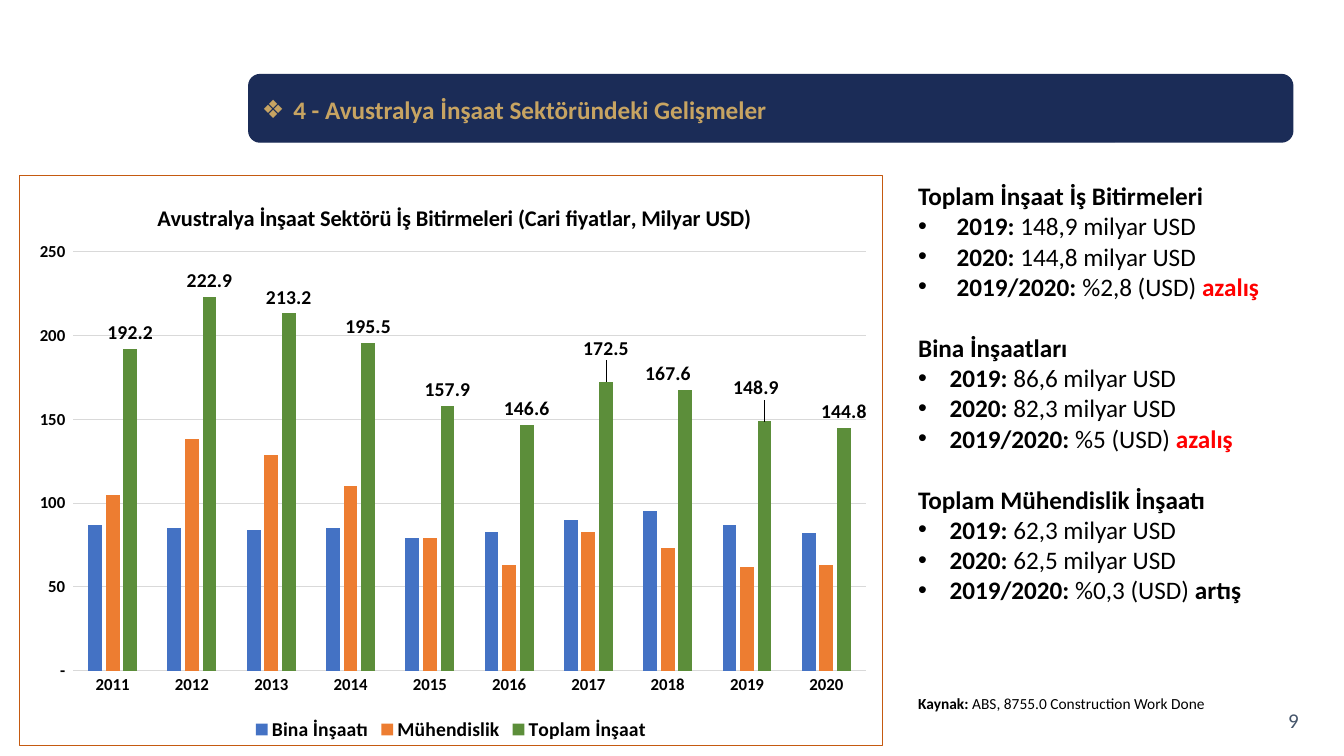
"""Builds a slide on Australian construction work with a column chart and key figures."""
from lxml import etree
from pptx import Presentation
from pptx import util as u
from pptx.chart.data import CategoryChartData
from pptx.dml.color import RGBColor
from pptx.enum import chart as ch, shapes, text
from pptx.oxml import parse_xml
from pptx.oxml.ns import nsdecls, qn

NAVY = RGBColor(0x1B, 0x2C, 0x57)
GOLD = RGBColor(0xC7, 0xA4, 0x62)
SLATE = RGBColor(0x44, 0x54, 0x6A)
BLACK = RGBColor(0, 0, 0)
RED = RGBColor(0xFF, 0, 0)
GREY = RGBColor(0xD9, 0xD9, 0xD9)
WHITE = RGBColor(0xFF, 0xFF, 0xFF)
RUST = RGBColor(0xC5, 0x5A, 0x11)
BLUE = RGBColor(0x44, 0x72, 0xC4)
ORANGE = RGBColor(0xED, 0x7D, 0x31)
GREEN = RGBColor(0x5C, 0x8E, 0x3A)

SERIES = [
    ("Bina İnşaatı", BLUE, [87, 85, 84, 85, 79, 83, 90, 95, 87, 82]),
    ("Mühendislik", ORANGE, [105, 138, 129, 110, 79, 63, 83, 73, 62, 63]),
    ("Toplam İnşaat", GREEN,
     [192.2, 222.9, 213.2, 195.5, 157.9, 146.6, 172.5, 167.6, 148.9, 144.8]),
]
MOVED_LABELS = {6: (0, -0.03), 7: (-0.02, 0), 8: (-0.01, -0.03)}
FIGURES = [
    ("Toplam İnşaat İş Bitirmeleri", 0.97, "148,9", "144,8", "%2,8", "azalış", RED),
    ("Bina İnşaatları", 0.79, "86,6", "82,3", "%5", "azalış", RED),
    ("Toplam Mühendislik İnşaatı", 0.79, "62,3", "62,5", "%0,3", "artış", BLACK),
]


def style(font, size, color=BLACK, bold=False):
    """Set the font of a run or chart part."""
    font.name, font.size, font.bold = "Calibri", u.Pt(size), bold
    font.color.rgb = color


def write(p, content, size=18, color=BLACK, bold=False):
    """Add a formatted run to a paragraph."""
    r = p.add_run()
    r.text = content
    style(r.font, size, color, bold)


def bullet(p, char, indent):
    """Give a paragraph a hanging bullet."""
    pPr = p._p.get_or_add_pPr()
    pPr.set("marL", str(u.Cm(indent)))
    pPr.set("indent", str(-u.Cm(indent)))
    etree.SubElement(pPr, qn("a:buFont")).set("typeface", "Arial")
    etree.SubElement(pPr, qn("a:buChar")).set("char", char)


def layout(x, y, w=None, h=None):
    """Return a manual chart layout; with a size it describes the inner plot area."""
    parts = ""
    if w:
        parts = '<c:layoutTarget val="inner"/><c:xMode val="edge"/><c:yMode val="edge"/>'
    parts += f'<c:x val="{x}"/><c:y val="{y}"/>'
    if w:
        parts += f'<c:w val="{w}"/><c:h val="{h}"/>'
    return parse_xml(f'<c:layout {nsdecls("c")}><c:manualLayout>{parts}'
                     '</c:manualLayout></c:layout>')


def banner(s, x, y, w, h):
    """Draw the title bar."""
    sp = s.shapes.add_shape(shapes.MSO_SHAPE.ROUNDED_RECTANGLE,
                            u.Cm(x), u.Cm(y), u.Cm(w), u.Cm(h))
    sp.shadow.inherit = False
    sp.fill.solid()
    sp.fill.fore_color.rgb = NAVY
    sp.line.color.rgb = NAVY
    sp.line.width = u.Pt(1)
    tf = sp.text_frame
    tf.vertical_anchor = text.MSO_ANCHOR.MIDDLE
    p = tf.paragraphs[0]
    p.alignment = text.PP_ALIGN.JUSTIFY
    p.line_spacing = 1.1
    p.space_after = u.Pt(6)
    bullet(p, "❖", 0.79)
    write(p, "4 - Avustralya İnşaat Sektöründeki Gelişmeler", color=GOLD, bold=True)


def total_labels(series):
    """Label the totals and shift the crowded labels."""
    labels = series.data_labels
    labels.show_value = True
    labels.number_format, labels.number_format_is_linked = "#,##0.0", False
    labels.position = ch.XL_LABEL_POSITION.OUTSIDE_END
    style(labels.font, 14, bold=True)
    for i, shift in MOVED_LABELS.items():
        label = series.points[i].data_label
        style(label.font, 14, bold=True)
        label.position = ch.XL_LABEL_POSITION.OUTSIDE_END
        idx = labels._element.xpath(f'c:dLbl/c:idx[@val="{i}"]')[0]
        idx.addnext(layout(*shift))
    labels._element.append(parse_xml(
        f'<c:extLst {nsdecls("c")}><c:ext uri="{{CE6537A1-D6FC-4f65-9D91-7224C49458BB}}" '
        'xmlns:c15="http://schemas.microsoft.com/office/drawing/2012/chart">'
        '<c15:showLeaderLines val="1"/></c:ext></c:extLst>'))


def work_chart(s, x, y, w, h):
    """Place the framed column chart."""
    data = CategoryChartData(number_format="#,##0.0")
    data.categories = [str(year) for year in range(2011, 2021)]
    for name, _, values in SERIES:
        data.add_series(name, values)
    chart = s.shapes.add_chart(ch.XL_CHART_TYPE.COLUMN_CLUSTERED, u.Cm(x), u.Cm(y),
                               u.Cm(w), u.Cm(h), data).chart
    style(chart.font, 10)
    chart.has_title = True
    write(chart.chart_title.text_frame.paragraphs[0],
          "Avustralya İnşaat Sektörü İş Bitirmeleri (Cari fiyatlar, Milyar USD)",
          size=16, bold=True)
    title_layout = layout(0.155, 0.04)
    for mode in ("c:yMode", "c:xMode"):
        el = etree.Element(qn(mode))
        el.set("val", "edge")
        title_layout[0].insert(0, el)
    title = chart.chart_title._element
    for old in title.findall(qn("c:layout")):
        title.remove(old)
    title.find(qn("c:tx")).addnext(title_layout)
    chart.has_legend = True
    chart.legend.position = ch.XL_LEGEND_POSITION.BOTTOM
    chart.legend.include_in_layout = False
    style(chart.legend.font, 14, bold=True)

    for axis in (chart.category_axis, chart.value_axis):
        axis.major_tick_mark = axis.minor_tick_mark = ch.XL_TICK_MARK.NONE
        style(axis.tick_labels.font, 12, bold=True)
    chart.category_axis.format.line.color.rgb = GREY
    chart.category_axis.format.line.width = u.Pt(0.75)
    values = chart.value_axis
    values.minimum_scale, values.maximum_scale, values.major_unit = 0, 250, 50
    values.format.line.fill.background()
    values.major_gridlines.format.line.color.rgb = GREY
    values.major_gridlines.format.line.width = u.Pt(0.75)
    values.tick_labels.number_format = '_(* #,##0_);_(* \\(#,##0\\);_(* "-"_);_(@_)'
    values.tick_labels.number_format_is_linked = False

    plot = chart.plots[0]
    plot.gap_width, plot.overlap, plot.vary_by_categories = 219, -27, False
    for series, (_, color, _) in zip(plot.series, SERIES):
        series.format.fill.solid()
        series.format.fill.fore_color.rgb = color
    total_labels(plot.series[2])

    area = chart._chartSpace.xpath("c:chart/c:plotArea")[0]
    for old in area.findall(qn("c:layout")):
        area.remove(old)
    area.insert(0, layout(0.062, 0.133, 0.919, 0.736))
    chart._chartSpace.xpath("c:chart")[0].addnext(parse_xml(
        f'<c:spPr {nsdecls("c", "a")}><a:solidFill><a:srgbClr val="{WHITE}"/></a:solidFill>'
        f'<a:ln w="{u.Pt(0.75)}"><a:solidFill><a:srgbClr val="{RUST}"/></a:solidFill>'
        '</a:ln></c:spPr>'))


def key_figures(s, x, y, w, h):
    """Write the three groups of figures and the source line."""
    tf = s.shapes.add_textbox(u.Cm(x), u.Cm(y), u.Cm(w), u.Cm(h)).text_frame
    tf.word_wrap = True
    tf.auto_size = text.MSO_AUTO_SIZE.SHAPE_TO_FIT_TEXT
    for n, (heading, indent, before, after, change, trend, color) in enumerate(FIGURES):
        p = tf.add_paragraph() if n else tf.paragraphs[0]
        if n:
            p.space_before = u.Pt(22)
        write(p, heading, bold=True)
        for label, value in (("2019: ", f"{before} milyar USD"),
                             ("2020: ", f"{after} milyar USD"),
                             ("2019/2020: ", f"{change} (USD) ")):
            p = tf.add_paragraph()
            bullet(p, "•", indent)
            write(p, label, bold=True)
            write(p, value)
        write(p, trend, color=color, bold=True)
    p = tf.add_paragraph()
    p.space_before = u.Pt(64)
    write(p, "Kaynak: ", size=11, bold=True)
    write(p, "ABS, 8755.0 Construction Work Done", size=11)


def page_number(s, x, y, w, h):
    """Write the page number."""
    tf = s.shapes.add_textbox(u.Cm(x), u.Cm(y), u.Cm(w), u.Cm(h)).text_frame
    tf.word_wrap = True
    tf.vertical_anchor = text.MSO_ANCHOR.MIDDLE
    tf.paragraphs[0].alignment = text.PP_ALIGN.CENTER
    write(tf.paragraphs[0], "9", size=15, color=SLATE)


prs = Presentation()
prs.slide_width, prs.slide_height = u.Cm(33.87), u.Cm(19.05)
s = prs.slides.add_slide(prs.slide_layouts[6])
page_number(s, 31.8, 17.5, 1.6, 1.3)
banner(s, 6.27, 1.88, 26.31, 1.7)
key_figures(s, 22.89, 4.42, 10.52, 13.82)
work_chart(s, 0.48, 4.42, 21.77, 14.38)
prs.save("out.pptx")
